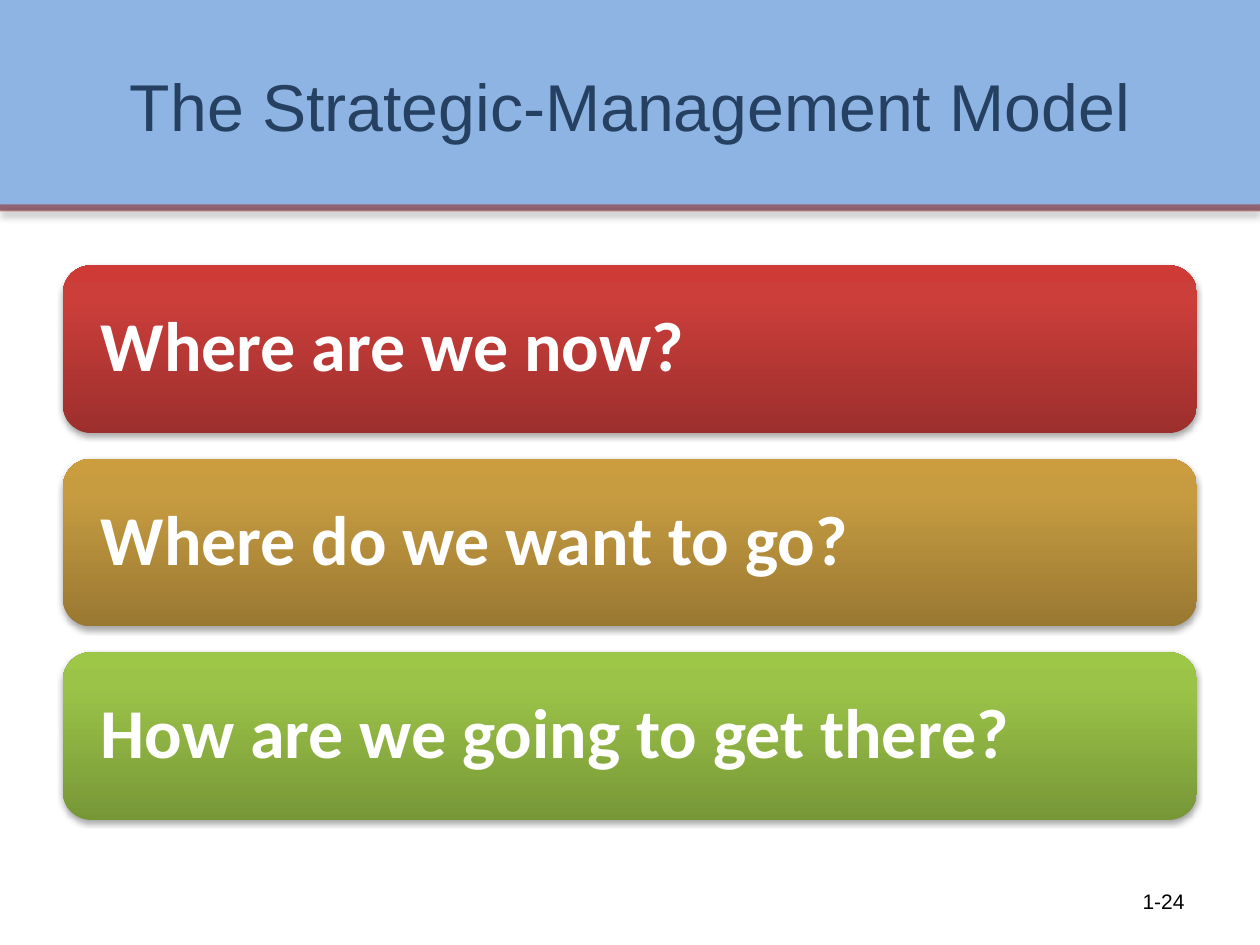
from lxml.etree import SubElement
from pptx import Presentation
from pptx.dml.color import RGBColor
from pptx.enum.shapes import MSO_CONNECTOR, MSO_SHAPE
from pptx.enum.text import MSO_ANCHOR, MSO_AUTO_SIZE, PP_ALIGN
from pptx.oxml.ns import qn
from pptx.util import Cm, Pt

BAND_BLUE = RGBColor(0x8E, 0xB4, 0xE3)
RULE_RED = RGBColor(0x95, 0x37, 0x35)
TITLE_NAVY = RGBColor(0x25, 0x40, 0x61)
WHITE = RGBColor(0xFF, 0xFF, 0xFF)
BLACK = RGBColor(0x00, 0x00, 0x00)

# Each question with its gradient, from the bottom edge to the top edge
QUESTIONS = [
    ("Where are we now?", ("9C2F2D", "CB3E3A", "CE3B37")),
    ("Where do we want to go?", ("997832", "C79C41", "CB9D3F")),
    ("How are we going to get there?", ("779737", "9BC348", "9DC746")),
]
GRADIENT_STOPS = (0, 80, 100)

PAGE_WIDTH, PAGE_HEIGHT = Cm(25.4), Cm(19.05)
MARGIN = Cm(1.27)
BAR_TOP, BAR_HEIGHT, BAR_PITCH = Cm(5.35), Cm(3.38), Cm(3.9)


def write_text(shape, text, size, color, font="Arial", bold=False,
               align=PP_ALIGN.LEFT, inset=Cm(0.25), line_spacing=1.0):
    frame = shape.text_frame
    frame.word_wrap = True
    frame.auto_size = MSO_AUTO_SIZE.NONE
    frame.vertical_anchor = MSO_ANCHOR.MIDDLE
    frame.margin_left = frame.margin_right = inset
    paragraph = frame.paragraphs[0]
    paragraph.alignment = align
    paragraph.line_spacing = line_spacing
    span = paragraph.add_run()
    span.text = text
    span.font.name = font
    span.font.size = Pt(size)
    span.font.bold = bold
    span.font.color.rgb = color


def add_alpha(color_element, percent):
    SubElement(color_element, qn("a:alpha"), val=str(percent * 1000))


def add_shadow(shape, opacity, blur, distance):
    """Give the shape a black shadow that falls straight down."""
    properties = shape._element.spPr
    effects = properties.find(qn("a:effectLst"))
    if effects is None:
        effects = SubElement(properties, qn("a:effectLst"))
    shadow = SubElement(effects, qn("a:outerShdw"), blurRad=str(Pt(blur)),
                        dist=str(Pt(distance)), dir="5400000", rotWithShape="0")
    add_alpha(SubElement(shadow, qn("a:srgbClr"), val=str(BLACK)), opacity)


def fill_gradient(shape, colors):
    shape.fill.gradient()
    shape.fill.gradient_angle = 90
    stops = shape._element.spPr.find(qn("a:gradFill")).find(qn("a:gsLst"))
    for stop in list(stops):
        stops.remove(stop)
    for position, color in zip(GRADIENT_STOPS, colors):
        stop = SubElement(stops, qn("a:gs"), pos=str(position * 1000))
        SubElement(stop, qn("a:srgbClr"), val=color)


def add_box(page, kind, left, top, width, height):
    box = page.shapes.add_shape(kind, left, top, width, height)
    box.shadow.inherit = False
    box.line.fill.background()
    return box


def add_header(page, text):
    # Band
    band = add_box(page, MSO_SHAPE.RECTANGLE, 0, 0, PAGE_WIDTH, Cm(4.24))
    band.fill.solid()
    band.fill.fore_color.rgb = BAND_BLUE
    # Translucent rule along its lower edge
    rule = page.shapes.add_connector(MSO_CONNECTOR.STRAIGHT,
                                     0, Cm(4.19), PAGE_WIDTH, Cm(4.19))
    rule.line.width = Pt(4)
    rule.line.color.rgb = RULE_RED
    add_alpha(rule.line._ln.find(".//" + qn("a:srgbClr")), 61)
    add_shadow(rule, opacity=40, blur=4, distance=3)
    # Title, brought in front of the band
    title = page.shapes.title
    title.left, title.top = MARGIN, Cm(0.53)
    title.width, title.height = PAGE_WIDTH - 2 * MARGIN, Cm(3.18)
    write_text(title, text, 37.8, TITLE_NAVY, align=PP_ALIGN.CENTER)
    rule._element.addnext(title._element)


def add_question_bar(page, top, text, colors):
    bar = add_box(page, MSO_SHAPE.ROUNDED_RECTANGLE, MARGIN, top,
                  PAGE_WIDTH - 2 * MARGIN, BAR_HEIGHT)
    fill_gradient(bar, colors)
    add_shadow(bar, opacity=35, blur=3.1, distance=1.8)
    write_text(bar, text, 40, WHITE, font="Calibri", bold=True,
               inset=Cm(0.6), line_spacing=0.9)


def add_page_number(page, text):
    box = page.shapes.add_textbox(Cm(18.21), Cm(17.65), Cm(5.92), Cm(1.02))
    write_text(box, text, 12, BLACK, align=PP_ALIGN.RIGHT)


def main():
    deck = Presentation()
    deck.slide_width, deck.slide_height = PAGE_WIDTH, PAGE_HEIGHT
    page = deck.slides.add_slide(deck.slide_layouts[5])
    add_header(page, "The Strategic-Management Model")
    for index, (text, colors) in enumerate(QUESTIONS):
        add_question_bar(page, BAR_TOP + index * BAR_PITCH, text, colors)
    add_page_number(page, "1-24")
    deck.save("out.pptx")


if __name__ == "__main__":
    main()
